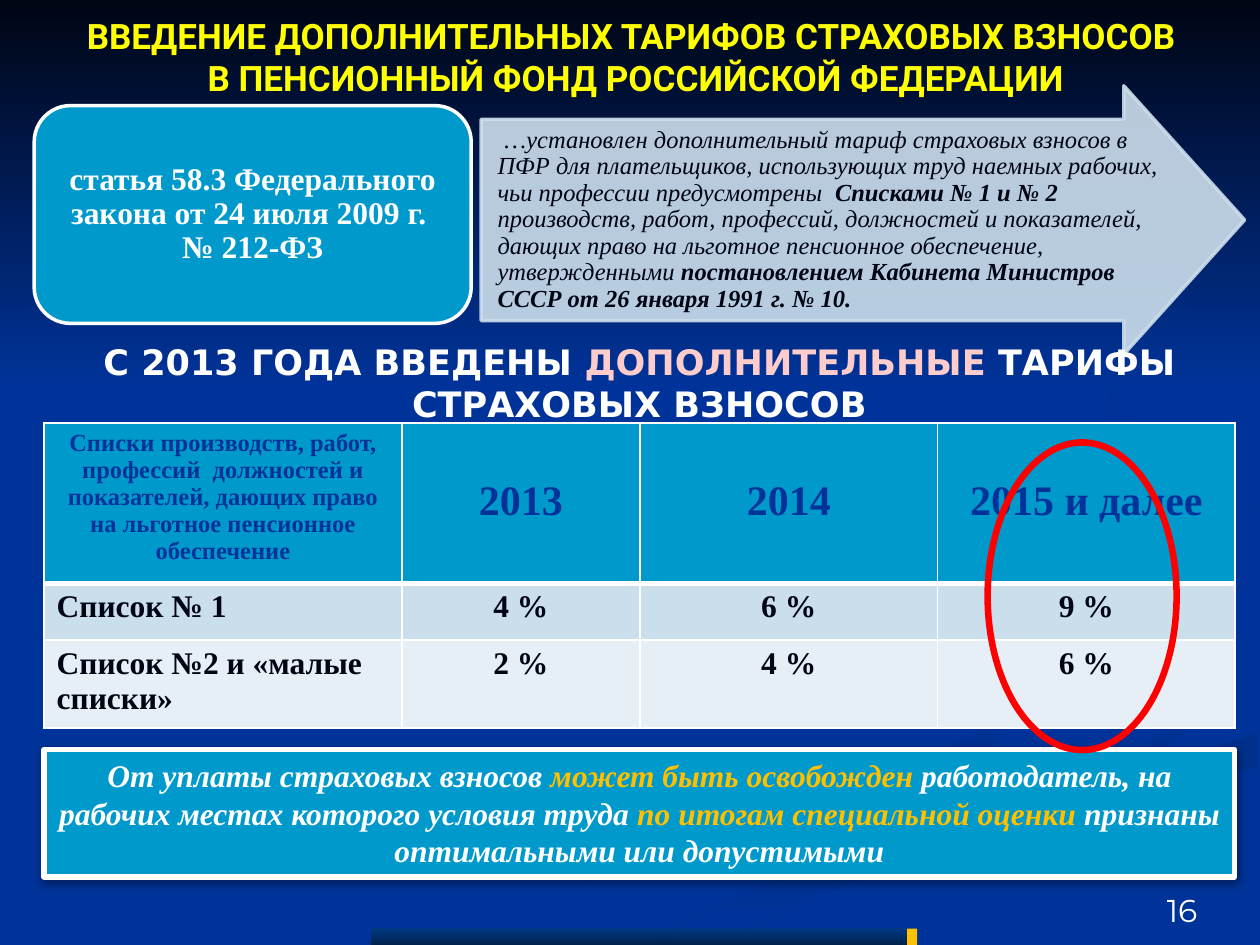
from lxml import etree
from pptx import Presentation
from pptx.dml.color import RGBColor
from pptx.enum.shapes import MSO_SHAPE
from pptx.enum.text import MSO_ANCHOR, PP_ALIGN
from pptx.oxml.ns import qn
from pptx.util import Cm, Pt

RECTANGLE, ROUNDED = MSO_SHAPE.RECTANGLE, MSO_SHAPE.ROUNDED_RECTANGLE
ARROW, OVAL = MSO_SHAPE.RIGHT_ARROW, MSO_SHAPE.OVAL
CENTER, LEFT = PP_ALIGN.CENTER, PP_ALIGN.LEFT
TOP, MIDDLE, BOTTOM = MSO_ANCHOR.TOP, MSO_ANCHOR.MIDDLE, MSO_ANCHOR.BOTTOM
SERIF = "Times New Roman"
COLORS = {
    "navy": "003399", "swirl": "003193", "deep": "002F8C", "night": "000514",
    "steel": "003C73", "ink": "001C35", "gold": "FFC000", "yellow": "FFFF00",
    "white": "FFFFFF", "pink": "FFCCCC", "cyan": "0099CC", "red": "FF0000",
    "pale": "CCDEEC", "row": "CBDEEC", "light_row": "E7EFF6",
}
RGB = {name: RGBColor.from_string(value) for name, value in COLORS.items()}


def dress(shape, fills, line=None, width=0, angle=270, opacity=()):
    shape.shadow.inherit = False
    if len(fills) == 2:
        shape.fill.gradient()
        shape.fill.gradient_angle = angle
        for stop, name in zip(shape.fill.gradient_stops, fills):
            stop.color.rgb = RGB[name]
    elif fills:
        shape.fill.solid()
        shape.fill.fore_color.rgb = RGB[fills[0]]
    else:
        shape.fill.background()
    if line:
        shape.line.color.rgb = RGB[line]
        shape.line.width = Pt(width)
    else:
        shape.line.fill.background()
    for color, percent in zip(shape._element.spPr.iter(qn("a:srgbClr")), opacity):
        etree.SubElement(color, qn("a:alpha"), val=str(percent * 1000))


def write(frame, paragraphs, size, font, align=CENTER, anchor=TOP, spacing=None):
    frame.word_wrap = True
    frame.vertical_anchor = anchor
    for index, runs in enumerate(paragraphs):
        paragraph = frame.add_paragraph() if index else frame.paragraphs[0]
        paragraph.alignment = align
        paragraph.line_spacing = spacing
        for text, color, style in runs:
            run = paragraph.add_run()
            run.text = text
            run.font.size = Pt(size)
            run.font.name = font
            run.font.bold = "b" in style
            run.font.italic = "i" in style
            run.font.color.rgb = RGB[color]


presentation = Presentation()
presentation.slide_width, presentation.slide_height = Cm(25.4), Cm(19.05)
slide = presentation.slides.add_slide(presentation.slide_layouts[6])
slide.background.fill.solid()
slide.background.fill.fore_color.rgb = RGB["navy"]
shapes = slide.shapes

swirls = [
    (("navy", "swirl"), 0, [
        (1984, 1405), (1857, 1367), (1679, 1318), (1560, 1275), (1491, 1222),
        (1461, 1166), (1448, 1199), (1476, 1229), (1552, 1267), (1725, 1318),
        (1882, 1370), (1984, 1412), (1996, 1438), (1966, 1481), (1877, 1519),
        (1737, 1557), (1471, 1623), (1267, 1679), (1059, 1753), (858, 1847),
        (762, 1902), (917, 1902), (1095, 1814), (1267, 1745), (1433, 1689),
        (1654, 1626), (1880, 1570), (1981, 1537), (2029, 1476), (2019, 1440)]),
    (("navy", "swirl"), 315, [
        (2395, 1448), (2362, 1405), (2256, 1359), (2108, 1318), (1966, 1278),
        (1862, 1227), (1839, 1179), (1839, 1196), (1862, 1240), (1946, 1300),
        (2070, 1346), (2205, 1382), (2286, 1415), (2332, 1476), (2304, 1516),
        (2271, 1537), (2350, 1506), (2390, 1476)]),
    (("deep", "navy"), 270, [
        (1318, 1897), (1278, 1902), (1450, 1902), (1560, 1844), (1702, 1783),
        (1910, 1707), (2187, 1626), (2535, 1547), (2535, 1476), (2446, 1509),
        (2294, 1549), (2024, 1621), (1768, 1699), (1600, 1760), (1445, 1826)]),
    (("swirl", "navy"), 315, [
        (1984, 1168), (1996, 1204), (2047, 1237), (2098, 1260), (2055, 1229),
        (2045, 1199), (2062, 1176), (2141, 1138), (2276, 1105), (2423, 1082),
        (2535, 1067), (2535, 1021), (2370, 1054), (2197, 1077), (2085, 1102),
        (2009, 1135)]),
    (("deep", "navy"), 315, [
        (1735, 1092), (1941, 1059), (2096, 1021), (2202, 975), (2258, 919),
        (2268, 851), (2235, 780), (2169, 719), (2029, 635), (1935, 592),
        (2045, 645), (2149, 709), (2225, 777), (2258, 851), (2225, 914),
        (2139, 960), (2009, 996), (1717, 1052), (1562, 1090), (1483, 1133),
        (1466, 1173), (1483, 1217), (1580, 1270), (1527, 1232), (1506, 1194),
        (1539, 1148), (1648, 1107)]),
]
for fills, angle, points in swirls:
    builder = shapes.build_freeform(*points[0], scale=Cm(0.01))
    builder.add_line_segments(points[1:], close=True)
    dress(builder.convert_to_shape(), fills, angle=angle)

bands = [
    ((0, 0, 25.4, 7.82), ("night", "navy"), ()),
    ((7.49, 18.72, 10.92, 0.33), ("steel", "ink"), (60, 80)),
    ((18.29, 18.72, 0.2, 0.33), ("gold",), ()),
]
for box, fills, opacity in bands:
    dress(shapes.add_shape(RECTANGLE, *map(Cm, box)), fills, opacity=opacity)

arrow = shapes.add_shape(ARROW, Cm(9.7), Cm(1.73), Cm(15.39), Cm(5.41))
arrow.adjustments[0], arrow.adjustments[1] = 0.75, 0.45
dress(arrow, ("pale",), "pale", 2, opacity=(90, 90))
frame = arrow.text_frame
frame.margin_left, frame.margin_right = Cm(0.03), Cm(-0.16)
frame.margin_top = frame.margin_bottom = 0
write(frame, [[
    ("…установлен дополнительный тариф страховых взносов в ПФР для плательщиков, "
     "использующих труд наемных рабочих, чьи профессии предусмотрены  ", "night", "i"),
    ("Списками № 1 и № 2 ", "night", "bi"),
    ("производств, работ, профессий, должностей и показателей, дающих право на "
     "льготное пенсионное обеспечение, утвержденными ", "night", "i"),
    ("постановлением Кабинета Министров СССР от 26 января 1991 г. № 10.", "night", "bi"),
]], 14, SERIF, LEFT, MIDDLE, 0.9)
properties = frame.paragraphs[0]._p.get_or_add_pPr()
properties.set("marL", str(Cm(0.3)))
properties.set("indent", str(Cm(0.14)))

article = shapes.add_shape(ROUNDED, Cm(0.69), Cm(2.13), Cm(8.81), Cm(4.39))
dress(article, ("cyan",), "white", 2)
frame = article.text_frame
frame.margin_left = frame.margin_right = Cm(0.17)
frame.margin_top = frame.margin_bottom = Cm(0.09)
write(frame, [
    [("статья 58.3 Федерального закона от 24 июля 2009 г. ", "white", "b")],
    [("№ 212-ФЗ", "white", "b")],
], 18, SERIF, anchor=MIDDLE, spacing=0.9)

labels = [
    ((0.51, 0.33, 24.61, 1.6), 20, "Roboto", MIDDLE, [
        [("ВВЕДЕНИЕ ДОПОЛНИТЕЛЬНЫХ ТАРИФОВ СТРАХОВЫХ ВЗНОСОВ ", "yellow", "b")],
        [("В ПЕНСИОННЫЙ ФОНД РОССИЙСКОЙ ФЕДЕРАЦИИ", "yellow", "b")]]),
    ((1.09, 6.73, 23.6, 1.96), 20, "DejaVu Sans", TOP, [[
        ("С 2013 ГОДА ВВЕДЕНЫ ", "white", "b"),
        ("ДОПОЛНИТЕЛЬНЫЕ", "pink", "b"),
        (" ТАРИФЫ СТРАХОВЫХ ВЗНОСОВ", "white", "b")]]),
    ((22.71, 17.53, 2.24, 1.32), 18, "Montserrat", BOTTOM, [[("16", "white", "")]]),
]
for box, size, font, anchor, paragraphs in labels:
    label = shapes.add_textbox(*map(Cm, box))
    write(label.text_frame, paragraphs, size, font, anchor=anchor)

rows = [
    ("Списки производств, работ, профессий  должностей и показателей, дающих право "
     "на льготное пенсионное обеспечение", "2013", "2014", "2015 и далее"),
    ("Список № 1", "4 %", "6 %", "9 %"),
    ("Список №2 и «малые списки»", "2 %", "4 %", "6 %"),
]
table = shapes.add_table(3, 4, Cm(0.89), Cm(8.53), Cm(24), Cm(6.15)).table
for column, width in zip(table.columns, (7.21, 4.8, 6, 6)):
    column.width = Cm(width)
for row, height in zip(table.rows, (3.23, 1.14, 1.78)):
    row.height = Cm(height)
for r, texts in enumerate(rows):
    for c, text in enumerate(texts):
        cell = table.cell(r, c)
        cell.fill.solid()
        cell.fill.fore_color.rgb = RGB[("cyan", "row", "light_row")[r]]
        size = 18 if r else 24 if c else 14
        if r == 0 and c:
            cell.margin_top = Cm(1.1)
        write(cell.text_frame, [[(text, "night" if r else "navy", "b")]], size, SERIF,
              LEFT if r and not c else CENTER)
        weights = {"L": 1, "R": 1, "T": 3 if r == 1 else 1, "B": 1 if r else 3}
        for index, (side, weight) in enumerate(weights.items()):
            border = etree.Element(qn(f"a:ln{side}"), w=str(Pt(weight)))
            paint = etree.SubElement(border, qn("a:solidFill"))
            etree.SubElement(paint, qn("a:srgbClr"), val=COLORS["white"])
            cell._tc.get_or_add_tcPr().insert(index, border)

exemption = shapes.add_shape(RECTANGLE, Cm(0.89), Cm(15.11), Cm(24), Cm(2.57))
dress(exemption, ("cyan",), "white", 3)
effects = exemption._element.spPr.find(qn("a:effectLst"))
shadow = etree.SubElement(effects, qn("a:outerShdw"), blurRad=str(Pt(5)),
                          dist=str(Pt(1.6)), dir="5400000", rotWithShape="0")
shade = etree.SubElement(shadow, qn("a:srgbClr"), val="000000")
etree.SubElement(shade, qn("a:alpha"), val="38000")
write(exemption.text_frame, [[
    ("От уплаты страховых взносов ", "white", "bi"),
    ("может быть освобожден ", "gold", "bi"),
    ("работодатель, на рабочих местах которого условия труда ", "white", "bi"),
    ("по итогам специальной оценки ", "gold", "bi"),
    ("признаны оптимальными или допустимыми", "white", "bi"),
]], 18, SERIF)

highlight = shapes.add_shape(OVAL, Cm(19.91), Cm(8.92), Cm(3.81), Cm(6.2))
dress(highlight, (), "red", 3.75)

presentation.save("out.pptx")
